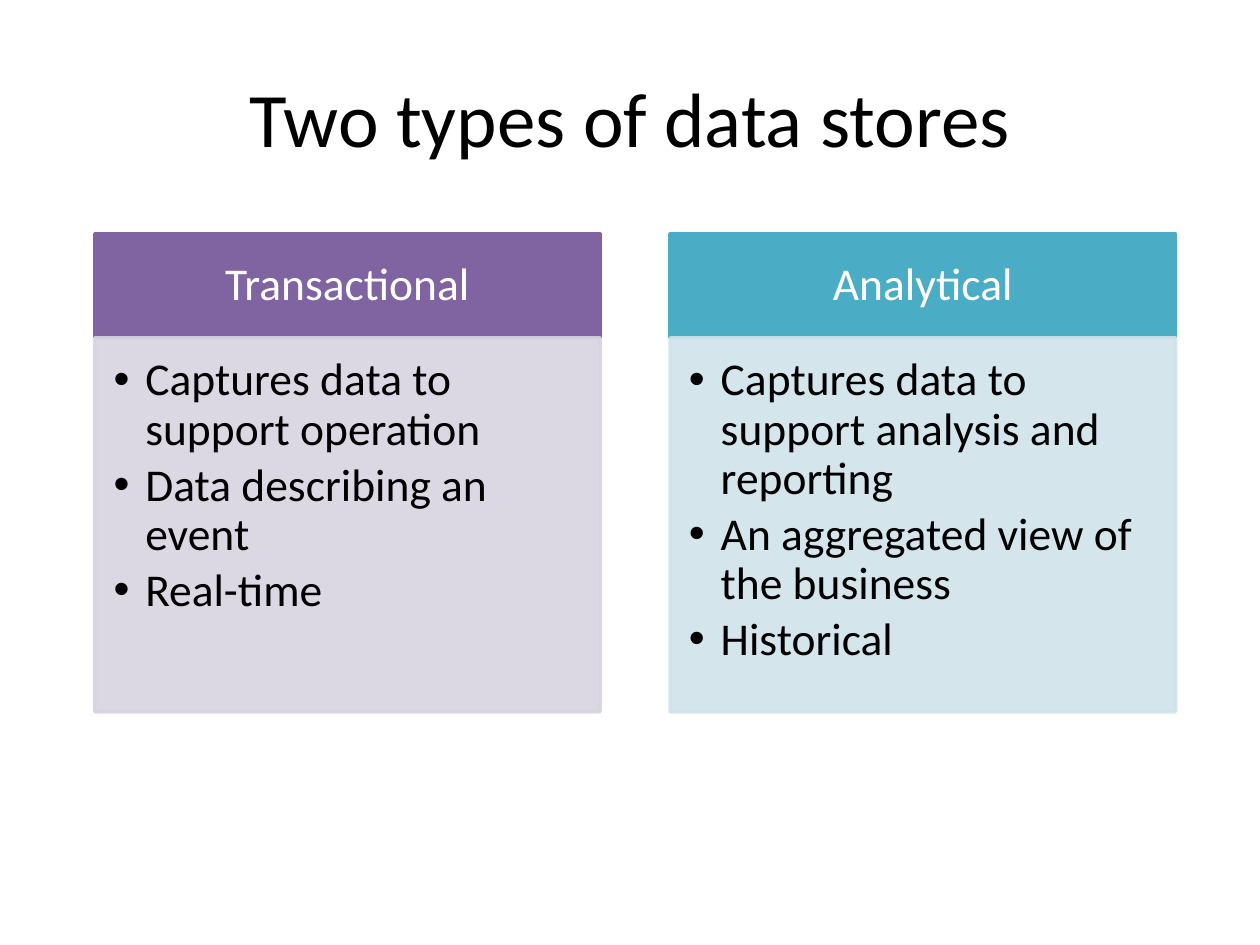
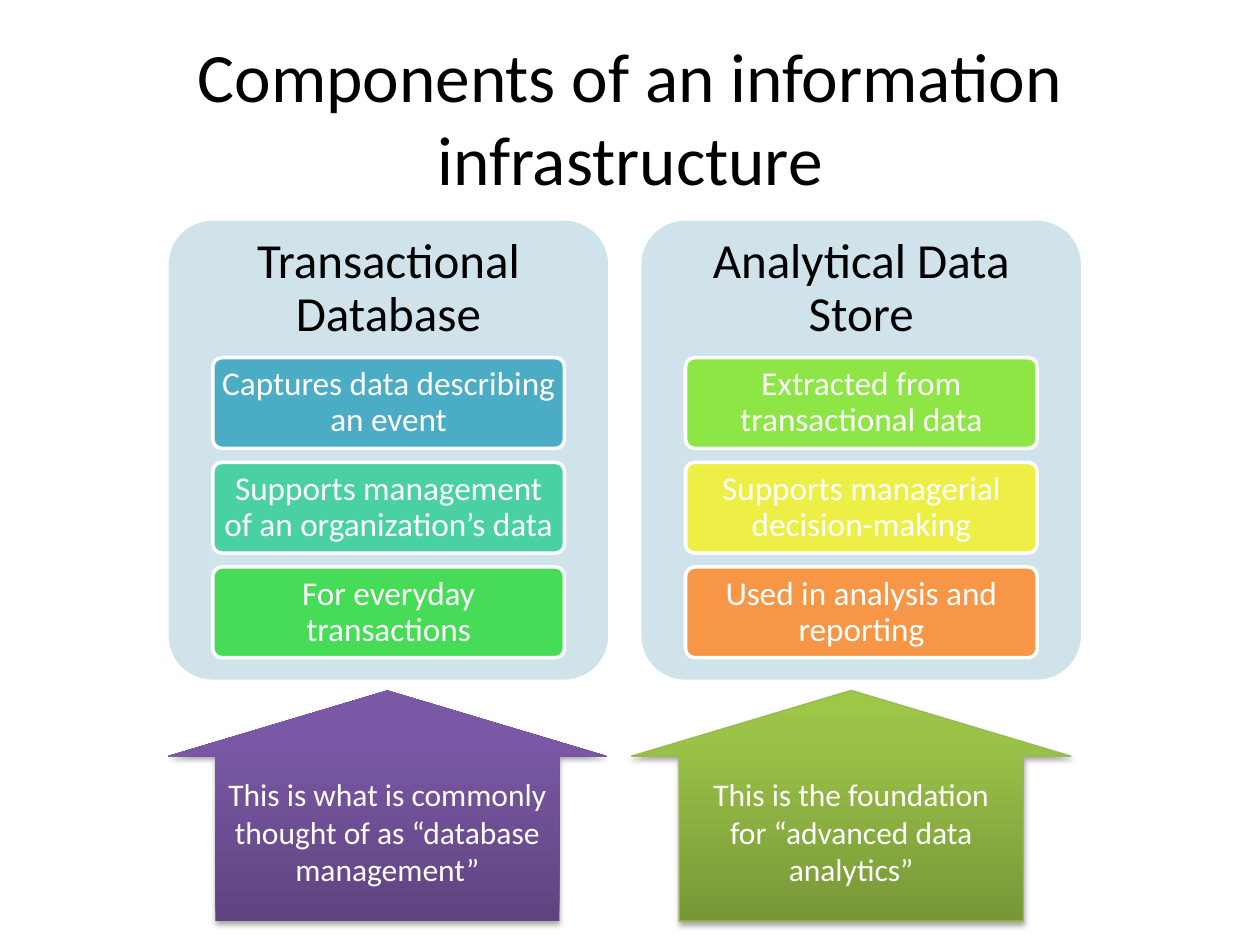
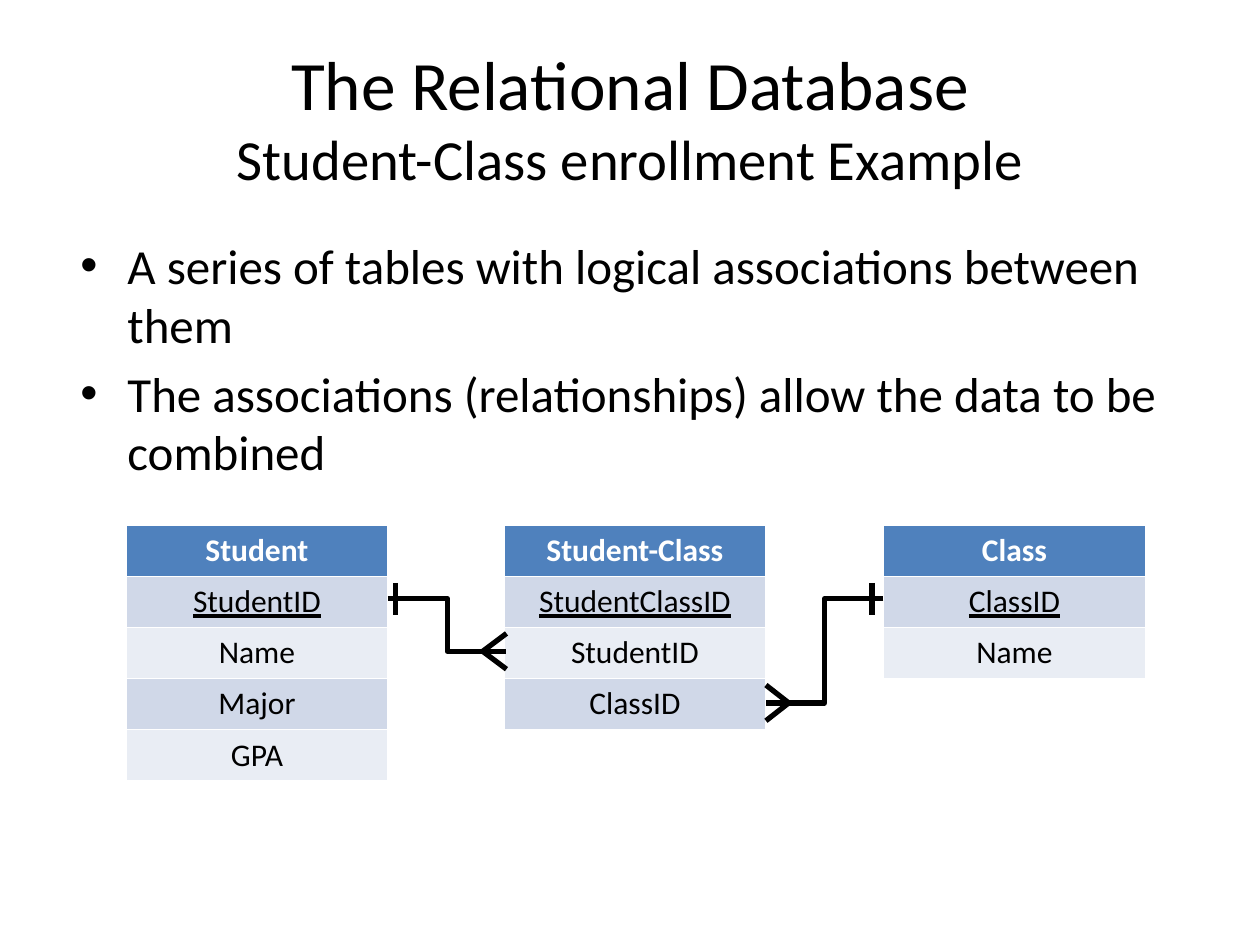
from copy import deepcopy
from dataclasses import dataclass
from typing import Optional

from lxml import etree
from pptx import Presentation
from pptx.dml.color import RGBColor
from pptx.enum.shapes import MSO_CONNECTOR, MSO_SHAPE
from pptx.enum.text import MSO_ANCHOR, MSO_AUTO_SIZE, PP_ALIGN
from pptx.oxml.ns import qn
from pptx.util import Cm, Pt

RECT = MSO_SHAPE.RECTANGLE
ROUND_RECT = MSO_SHAPE.ROUNDED_RECTANGLE
UP_ARROW = MSO_SHAPE.UP_ARROW
STRAIGHT = MSO_CONNECTOR.STRAIGHT
ELBOW = MSO_CONNECTOR.ELBOW
CENTER = PP_ALIGN.CENTER
LEFT = PP_ALIGN.LEFT
MIDDLE = MSO_ANCHOR.MIDDLE
TOP = MSO_ANCHOR.TOP
NO_FIT = MSO_AUTO_SIZE.NONE


@dataclass(frozen=True)
class Theme:
    font: str = "Calibri"
    black: str = "000000"
    white: str = "FFFFFF"
    purple: str = "8064A2"
    pale_purple: str = "D8D3E0"
    teal: str = "4BACC6"
    pale_teal: str = "D0E3EA"
    table_head: str = "4F81BD"
    table_bands: tuple[str, str] = ("D0D8E8", "E9EDF4")
    title: float = 44
    long_title: float = 39.6
    subtitle: float = 32.4
    body: float = 28
    panel: float = 26
    item: float = 19
    small: float = 18


THEME = Theme()


@dataclass(frozen=True)
class Box:
    left: float
    top: float
    width: float
    height: float

    def emu(self) -> tuple[int, int, int, int]:
        return Cm(self.left), Cm(self.top), Cm(self.width), Cm(self.height)


@dataclass(frozen=True)
class TextStyle:
    size: float
    color: str
    align: int = CENTER
    anchor: int = MIDDLE
    insets: tuple[float, float, float, float] = (0.25, 0.13, 0.25, 0.13)
    spacing: Optional[float] = None
    before: float = 0
    after: float = 0
    indent: float = 0


@dataclass(frozen=True)
class Panel:
    left: float
    heading: str
    color: str
    pale: str
    bullets: tuple[str, ...]


@dataclass(frozen=True)
class Item:
    text: str
    color: str


@dataclass(frozen=True)
class Card:
    left: float
    heading: str
    items: tuple[Item, ...]


@dataclass(frozen=True)
class Arrow:
    left: float
    text: str
    stops: tuple[tuple[float, str], ...]
    line: Optional[str] = None


@dataclass(frozen=True)
class Entity:
    left: float
    name: str
    fields: tuple[str, ...]


@dataclass(frozen=True)
class Relationship:
    one_x: float
    tick_x: float
    many_x: float
    fork_x: float
    many_y: float


TITLE_BOX = Box(1.27, 0.76, 22.86, 3.18)

PANEL_HEAD = TextStyle(THEME.panel, THEME.white, insets=(0.51, 0.3, 0.51, 0.3), spacing=0.9)
PANEL_BODY = TextStyle(THEME.panel, THEME.black, LEFT, TOP, (0.38, 0.38, 0.51, 0.58),
                       spacing=0.9, after=4, indent=0.64)
CARD_HEAD = TextStyle(THEME.body, THEME.black, insets=(0.3, 0.3, 0.3, 0.3), spacing=0.9)
CARD_ITEM = TextStyle(THEME.item, THEME.white, insets=(0.13, 0.1, 0.13, 0.1), spacing=0.9)
ARROW_TEXT = TextStyle(THEME.small, THEME.white)
BODY_TEXT = TextStyle(THEME.body, THEME.black, LEFT, TOP, before=5.6, indent=0.95)

PANELS = (
    Panel(1.91, "Transactional", THEME.purple, THEME.pale_purple,
          ("Captures data to support operation", "Data describing an event", "Real-time")),
    Panel(13.51, "Analytical", THEME.teal, THEME.pale_teal,
          ("Captures data to support analysis and reporting",
           "An aggregated view of the business", "Historical")),
)

CARDS = (
    Card(3.4, "Transactional Database", (
        Item("Captures data describing an event", THEME.teal),
        Item("Supports management of an organization’s data", "49D1A3"),
        Item("For everyday transactions", "47DC57"))),
    Card(12.93, "Analytical Data Store", (
        Item("Extracted from transactional data", "8DE646"),
        Item("Supports managerial decision-making", "EEEF46"),
        Item("Used in analysis and reporting", "F79646"))),
)

ARROWS = (
    Arrow(3.38, "This is what is commonly thought of as “database management”",
          ((0, "5F4480"), (0.8, "7B58A6"), (1, "7C57A8"))),
    Arrow(12.73, "This is the foundation for “advanced data analytics”",
          ((0, "779737"), (0.8, "9BC348"), (1, "9DC746")), "98B955"),
)

ENTITIES = (
    Entity(2.54, "Student", ("StudentID", "Name", "Major", "GPA")),
    Entity(10.16, "Student-Class", ("StudentClassID", "StudentID", "ClassID")),
    Entity(17.81, "Class", ("ClassID", "Name")),
)

RELATIONSHIPS = (
    Relationship(7.82, 7.98, 10.21, 9.73, 13.13),
    Relationship(17.81, 17.58, 15.44, 15.9, 14.17),
)


def rgb(color: str) -> RGBColor:
    return RGBColor.from_string(color)


def format_run(r, size: float, color: str) -> None:
    r.font.name = THEME.font
    r.font.size = Pt(size)
    r.font.color.rgb = rgb(color)


def add_bullet(p, indent: float) -> None:
    pPr = p._p.get_or_add_pPr()
    pPr.set("marL", str(Cm(indent)))
    pPr.set("indent", str(-Cm(indent)))
    etree.SubElement(pPr, qn("a:buFont"), typeface="Arial")
    etree.SubElement(pPr, qn("a:buChar"), char="•")


def write(sp, lines: tuple[str, ...], style: TextStyle) -> None:
    tf = sp.text_frame
    tf.text = "\n".join(lines)
    tf.word_wrap = True
    tf.auto_size = NO_FIT
    tf.vertical_anchor = style.anchor
    tf.margin_left, tf.margin_top, tf.margin_right, tf.margin_bottom = map(Cm, style.insets)
    for p in tf.paragraphs:
        p.alignment = style.align
        p.line_spacing = style.spacing
        p.space_before = Pt(style.before)
        p.space_after = Pt(style.after)
        if style.indent:
            add_bullet(p, style.indent)
        for r in p.runs:
            format_run(r, style.size, style.color)


def add_box(slide, kind: int, box: Box, fill: Optional[str] = None,
            line: Optional[str] = None, width: float = 2):
    sp = slide.shapes.add_shape(kind, *box.emu())
    sp.shadow.inherit = False
    if fill:
        sp.fill.solid()
        sp.fill.fore_color.rgb = rgb(fill)
    if line:
        sp.line.color.rgb = rgb(line)
        sp.line.width = Pt(width)
    else:
        sp.line.fill.background()
    return sp


def add_text(slide, box: Box, lines: tuple[str, ...], style: TextStyle) -> None:
    write(slide.shapes.add_textbox(*box.emu()), lines, style)


def set_opacity(sp, percent: int) -> None:
    for clr in sp._element.spPr.iter(qn("a:srgbClr")):
        etree.SubElement(clr, qn("a:alpha"), val=str(percent * 1000))


def add_title_slide(prs, lines: tuple[str, ...], sizes: tuple[float, ...]):
    slide = prs.slides.add_slide(prs.slide_layouts[5])
    title = slide.shapes.title
    title.left, title.top, title.width, title.height = TITLE_BOX.emu()
    tf = title.text_frame
    tf.auto_size = NO_FIT
    tf.vertical_anchor = MIDDLE
    p = tf.paragraphs[0]
    p.text = "\v".join(lines)
    p.alignment = CENTER
    for r, size in zip(p.runs, sizes):
        format_run(r, size, THEME.black)
    return slide


def add_panel(slide, panel: Panel) -> None:
    head = add_box(slide, RECT, Box(panel.left, 4.72, 10.19, 2.08), panel.color, panel.color)
    write(head, (panel.heading,), PANEL_HEAD)
    body = add_box(slide, RECT, Box(panel.left, 6.81, 10.19, 7.54), panel.pale, panel.pale)
    set_opacity(body, 90)
    write(body, panel.bullets, PANEL_BODY)


def add_card(slide, card: Card) -> None:
    sp = add_box(slide, ROUND_RECT, Box(card.left, 4.45, 8.86, 9.25), THEME.pale_teal)
    sp.adjustments[0] = 0.1
    add_text(slide, Box(card.left, 4.45, 8.86, 2.77), (card.heading,), CARD_HEAD)
    for i, item in enumerate(card.items):
        box = Box(card.left + 0.89, 7.21 + 2.11 * i, 7.09, 1.83)
        sp = add_box(slide, ROUND_RECT, box, item.color, THEME.white)
        sp.adjustments[0] = 0.1
        write(sp, (item.text,), CARD_ITEM)


def add_shadow(sp) -> None:
    effects = sp._element.spPr.find(qn("a:effectLst"))
    shadow = etree.SubElement(effects, qn("a:outerShdw"), blurRad=str(Pt(3.1)),
                              dist=str(Pt(1.8)), dir="5400000", rotWithShape="0")
    clr = etree.SubElement(shadow, qn("a:srgbClr"), val=THEME.black)
    etree.SubElement(clr, qn("a:alpha"), val="35000")


def add_arrow(slide, arrow: Arrow) -> None:
    box = Box(arrow.left, 13.92, 8.86, 4.65)
    sp = add_box(slide, UP_ARROW, box, line=arrow.line, width=0.75)
    sp.adjustments[0] = 0.783
    sp.adjustments[1] = 0.285
    sp.fill.gradient()
    sp.fill.gradient_angle = 90
    stop_list = sp._element.spPr.find(".//" + qn("a:gsLst"))
    stop_list.append(deepcopy(stop_list[0]))
    for stop, (position, color) in zip(sp.fill.gradient_stops, arrow.stops):
        stop.position = position
        stop.color.rgb = rgb(color)
    add_shadow(sp)
    write(sp, (arrow.text,), ARROW_TEXT)


def add_entity(slide, entity: Entity) -> None:
    rows = (entity.name, *entity.fields)
    box = Box(entity.left, 10.59, 5.28, 1.02 * len(rows))
    table = slide.shapes.add_table(len(rows), 1, *box.emu()).table
    for i, text in enumerate(rows):
        is_head = i == 0
        cell = table.cell(i, 0)
        cell.fill.solid()
        cell.fill.fore_color.rgb = rgb(
            THEME.table_head if is_head else THEME.table_bands[(i - 1) % 2])
        p = cell.text_frame.paragraphs[0]
        p.text = text
        p.alignment = CENTER
        r = p.runs[0]
        format_run(r, THEME.small, THEME.white if is_head else THEME.black)
        r.font.bold = is_head
        r.font.underline = i == 1


def add_line(slide, kind: int, x1: float, y1: float, x2: float, y2: float) -> None:
    line = slide.shapes.add_connector(kind, Cm(x1), Cm(y1), Cm(x2), Cm(y2))
    line.line.color.rgb = rgb(THEME.black)
    line.line.width = Pt(3)
    etree.SubElement(line._element.spPr, qn("a:effectLst"))


def add_relationship(slide, rel: Relationship) -> None:
    one_y = 12.07
    add_line(slide, ELBOW, rel.one_x, one_y, rel.many_x, rel.many_y)
    for spread in (-0.36, 0.36):
        add_line(slide, STRAIGHT, rel.many_x, rel.many_y + spread, rel.fork_x, rel.many_y)
    add_line(slide, STRAIGHT, rel.tick_x, one_y - 0.32, rel.tick_x, one_y + 0.32)


def main() -> None:
    prs = Presentation()
    prs.slide_width = Cm(25.4)
    prs.slide_height = Cm(19.05)

    slide = add_title_slide(prs, ("Two types of data stores",), (THEME.title,))
    for panel in PANELS:
        add_panel(slide, panel)

    slide = add_title_slide(prs, ("Components of an information infrastructure",),
                            (THEME.long_title,))
    for arrow in ARROWS:
        add_arrow(slide, arrow)
    for card in CARDS:
        add_card(slide, card)

    slide = add_title_slide(prs, ("The Relational Database", "Student-Class enrollment Example"),
                            (THEME.long_title, THEME.subtitle))
    add_text(slide, Box(1.37, 4.62, 22.76, 5.61),
             ("A series of tables with logical associations between them",
              "The associations (relationships) allow the data to be combined"), BODY_TEXT)
    for entity in ENTITIES:
        add_entity(slide, entity)
    for rel in RELATIONSHIPS:
        add_relationship(slide, rel)

    prs.save("out.pptx")


if __name__ == "__main__":
    main()
